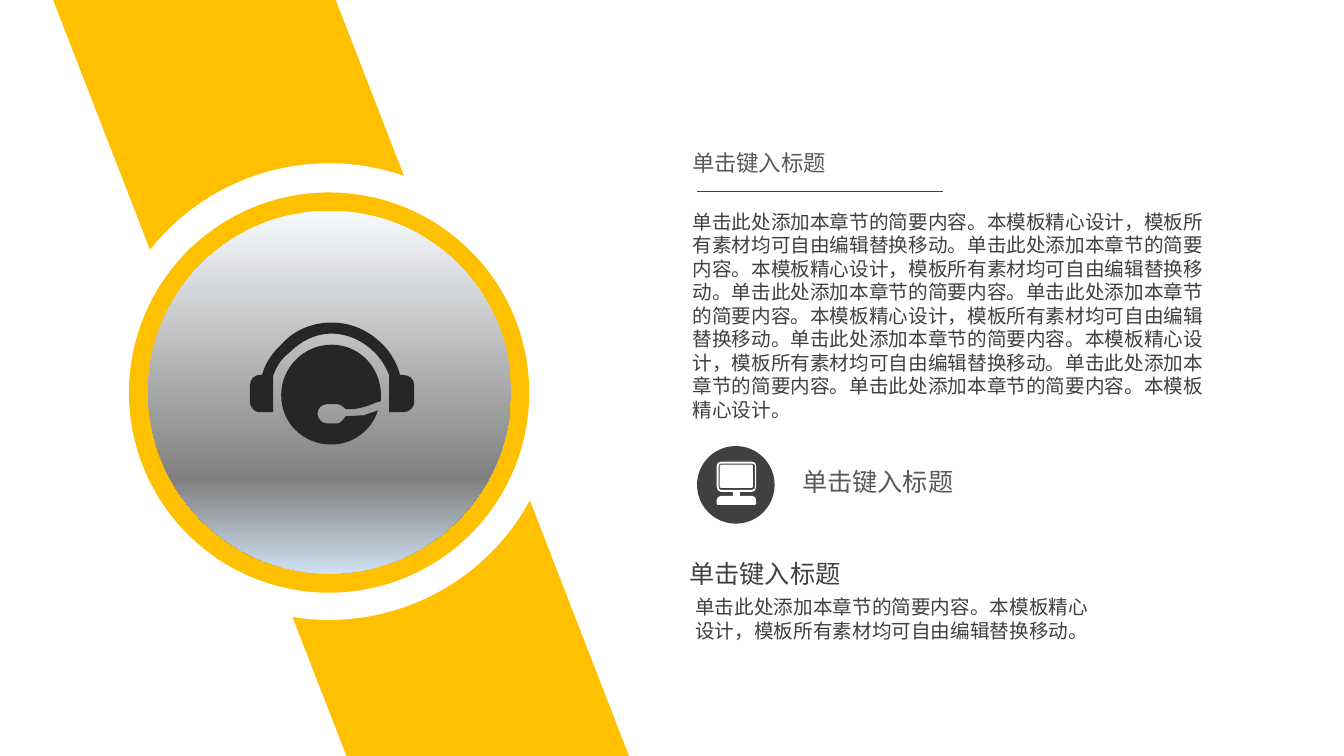
from copy import deepcopy

from lxml import etree
from pptx import Presentation
from pptx import util as u
from pptx.dml.color import RGBColor
from pptx.enum import shapes, text
from pptx.oxml.ns import qn

CELL = 91440  # square grid cell, a tenth of an inch
COLS, ROWS = 133.33, 75
YELLOW, WHITE, DARK, GREY, BLACK = "FFC000", "FFFFFF", "404040", "595959", "262626"

HEADING = "单击键入标题"
INTRO = "单击此处添加本章节的简要内容。"
DETAIL = "本模板精心设计，模板所有素材均可自由编辑替换移动。"
BODY = (INTRO + DETAIL) * 2 + INTRO + (INTRO + DETAIL) * 2 + INTRO * 2 + "本模板精心设计。"

# Icon contours in cells: pairs are corners, sixes are Bezier curves
HEAD = [
    (32.9, 34.2), (35.7, 34.2, 37.8, 36.5, 37.8, 39.2), (37.8, 39.8),
    (37.2, 39.9, 36.6, 40.3, 36, 40.4), (35.4, 40.6, 34.9, 40.6, 34.3, 40.6),
    (34.1, 40.4, 33.8, 40.1, 33.5, 40.1), (32.4, 40.1),
    (31.9, 40.1, 31.5, 40.6, 31.5, 41), (31.5, 41.5, 31.9, 42, 32.4, 42),
    (33.5, 42), (33.8, 42, 34.1, 41.6, 34.3, 41.3),
    (34.9, 41.3, 35.5, 41.2, 36.1, 41.2), (36.6, 41, 37.1, 40.9, 37.5, 40.7),
    (36.9, 42.7, 35, 44.1, 32.9, 44.1), (30.1, 44.1, 27.9, 42, 27.9, 39.2),
    (27.9, 36.5, 30.1, 34.2, 32.9, 34.2)]
HEADSET = [
    (32.9, 32), (30.9, 32, 29.1, 32.8, 27.9, 34.2), (27, 35, 26.3, 36.1, 26, 37.2),
    (25.7, 37.2), (25.3, 37.2, 24.8, 37.6, 24.8, 38.2), (24.8, 39.9),
    (24.8, 40.4, 25.3, 40.9, 25.7, 40.9), (27.1, 40.9), (27.1, 37.3),
    (27.4, 36.4, 27.9, 35.6, 28.7, 35), (29.8, 33.9, 31.2, 33.1, 32.9, 33.1),
    (34.6, 33.1, 36.1, 33.9, 37.2, 35), (37.8, 35.6, 38.3, 36.4, 38.6, 37.2),
    (38.6, 40.9), (40, 40.9), (40.6, 40.9, 41.1, 40.4, 41.1, 39.9), (41.1, 38.2),
    (41.1, 37.6, 40.6, 37.2, 40, 37.2), (39.7, 37.2),
    (39.4, 36.1, 38.8, 35, 38, 34.2), (36.6, 32.8, 34.9, 32, 32.9, 32)]
MONITOR = [
    (74.6, 48.8), (74.9, 48.8, 75, 48.6, 75, 48.3), (75, 46.2),
    (75, 46, 74.9, 45.8, 74.6, 45.8), (71.5, 45.8), (71.3, 45.8, 71.1, 46, 71.1, 46.2),
    (71.1, 48.3), (71.1, 48.6, 71.3, 48.8, 71.5, 48.8), (72.7, 48.8), (72.7, 49.2),
    (71.5, 49.2), (71.3, 49.2, 71.1, 49.4, 71.1, 49.6), (71.1, 50), (71.2, 50.1),
    (74.9, 50.1), (75, 50), (75, 49.6), (75, 49.4, 74.9, 49.2, 74.6, 49.2),
    (73.4, 49.2), (73.4, 48.8)]
BEZEL = [
    (71.3, 48.3), (71.3, 46.2), (71.3, 46.1, 71.4, 46, 71.5, 46), (74.6, 46),
    (74.8, 46, 74.9, 46.1, 74.9, 46.2), (74.9, 48.3),
    (74.9, 48.5, 74.8, 48.6, 74.6, 48.6), (71.5, 48.6),
    (71.4, 48.6, 71.3, 48.5, 71.3, 48.3)]
SCREEN = [(74.7, 48.3), (74.7, 46.2), (74.6, 46.1), (71.5, 46.1), (71.4, 46.2),
          (71.4, 48.3), (71.5, 48.4), (74.6, 48.4)]


def rgb(hex_color):
    return RGBColor.from_string(hex_color)


def cells(*values):
    return [u.Emu(round(v * CELL)) for v in values]


class SlideBuilder:
    font = "Noto Sans CJK SC"

    def __init__(self, prs):
        self.s = prs.slides.add_slide(prs.slide_layouts[1])

    def paint(self, sp, color):
        sp.shadow.inherit = False
        sp.line.fill.background()
        sp.fill.solid()
        sp.fill.fore_color.rgb = rgb(color)
        return sp

    def shape(self, kind, box, color):
        return self.paint(self.s.shapes.add_shape(kind, *cells(*box)), color)

    def circle(self, x, y, size, color):
        return self.shape(shapes.MSO_SHAPE.OVAL, (x, y, size, size), color)

    def gradient(self, sp, stops):
        sp.fill.gradient()
        sp.fill.gradient_angle = 270
        gs = sp._element.spPr.find(".//" + qn("a:gsLst"))
        gs.append(deepcopy(gs[-1]))
        for stop, (position, color) in zip(sp.fill.gradient_stops, stops):
            stop.position = position
            stop.color.rgb = rgb(color)

    def outline(self, contours, color):
        builder = None
        for start, *parts in contours:
            if builder is None:
                builder = self.s.shapes.build_freeform(*cells(*start), scale=1.0)
            else:
                builder.move_to(*cells(*start))
            points = [cells(*part[i:i + 2]) for part in parts for i in range(0, len(part), 2)]
            builder.add_line_segments(points, close=True)
        sp = self.paint(builder.convert_to_shape(), color)
        # Join the three points of each curve into one Bezier segment
        segments = sp._element.spPr.iter(qn("a:lnTo"))
        segments = iter(list(segments))
        for part in (part for contour in contours for part in contour[1:]):
            first = next(segments)
            if len(part) == 6:
                first.tag = qn("a:cubicBezTo")
                for other in (next(segments), next(segments)):
                    first.append(other[0])
                    other.getparent().remove(other)
        return sp

    def line(self, x1, y1, x2, y2, color, width):
        cxn = self.s.shapes.add_connector(shapes.MSO_CONNECTOR.STRAIGHT, *cells(x1, y1, x2, y2))
        cxn.line.color.rgb = rgb(color)
        cxn.line.width = u.Pt(width)
        etree.SubElement(cxn._element.spPr, qn("a:effectLst"))

    def text(self, box, words, size, color, sp=None, spacing=None):
        sp = sp or self.s.shapes.add_textbox(0, 0, 0, 0)
        sp.left, sp.top, sp.width, sp.height = cells(*box)
        tf = sp.text_frame
        tf.word_wrap = True
        tf.auto_size = text.MSO_AUTO_SIZE.NONE
        tf.vertical_anchor = text.MSO_ANCHOR.TOP if spacing else text.MSO_ANCHOR.MIDDLE
        p = tf.paragraphs[0]
        pPr = p._p.get_or_add_pPr()
        pPr.set("marL", "0")
        pPr.set("indent", "0")
        etree.SubElement(pPr, qn("a:buNone"))
        p.alignment = text.PP_ALIGN.LEFT
        p.space_before = u.Pt(0)
        if spacing:
            p.line_spacing = u.Pt(spacing)
        r = p.add_run()
        r.text = words
        r.font.name = self.font
        r.font.size = u.Pt(size)
        r.font.color.rgb = rgb(color)
        rPr = r._r.get_or_add_rPr()
        rPr.set("lang", "zh-CN")
        etree.SubElement(rPr, qn("a:ea"), typeface=self.font)


def main():
    prs = Presentation()
    prs.slide_width, prs.slide_height = cells(COLS, ROWS)
    b = SlideBuilder(prs)
    title, body = b.s.placeholders

    # Slanted band
    band = b.shape(shapes.MSO_SHAPE.PARALLELOGRAM, (5.2, -0.2, 57.2, 75.2), YELLOW)
    band.adjustments[0] = 0.51
    band._element.spPr.find(qn("a:xfrm")).set("flipH", "1")

    # Rings with the headset
    b.circle(10, 16.2, 45.3, WHITE)
    b.circle(12.8, 19.1, 39.7, YELLOW)
    disc = b.circle(14.7, 20.9, 36, WHITE)
    b.gradient(disc, [(0, "F7FAFD"), (0.74, "808080"), (1, "CEE1F2")])
    b.outline([HEAD, HEADSET], BLACK)

    # Title and main text
    b.text((67.65, 14.2, 21.8, 3.9), HEADING, 16, GREY, title)
    b.line(69.15, 19, 93.6, 19, DARK, 1.25)
    b.text((67.7, 20.3, 53, 22), BODY, 14, DARK, body, spacing=16.8)

    # Computer badge
    b.circle(69.15, 44.25, 7.7, DARK)
    b.outline([MONITOR, BEZEL, SCREEN], WHITE)
    b.text((78.6, 45.8, 24, 4), HEADING, 18, GREY)

    # Closing section
    b.text((67.4, 54.9, 24, 4), HEADING, 18, DARK)
    b.text((68, 58.55, 41.5, 5.8), INTRO + DETAIL, 14, DARK, spacing=16.8)

    prs.save("out.pptx")


if __name__ == "__main__":
    main()
